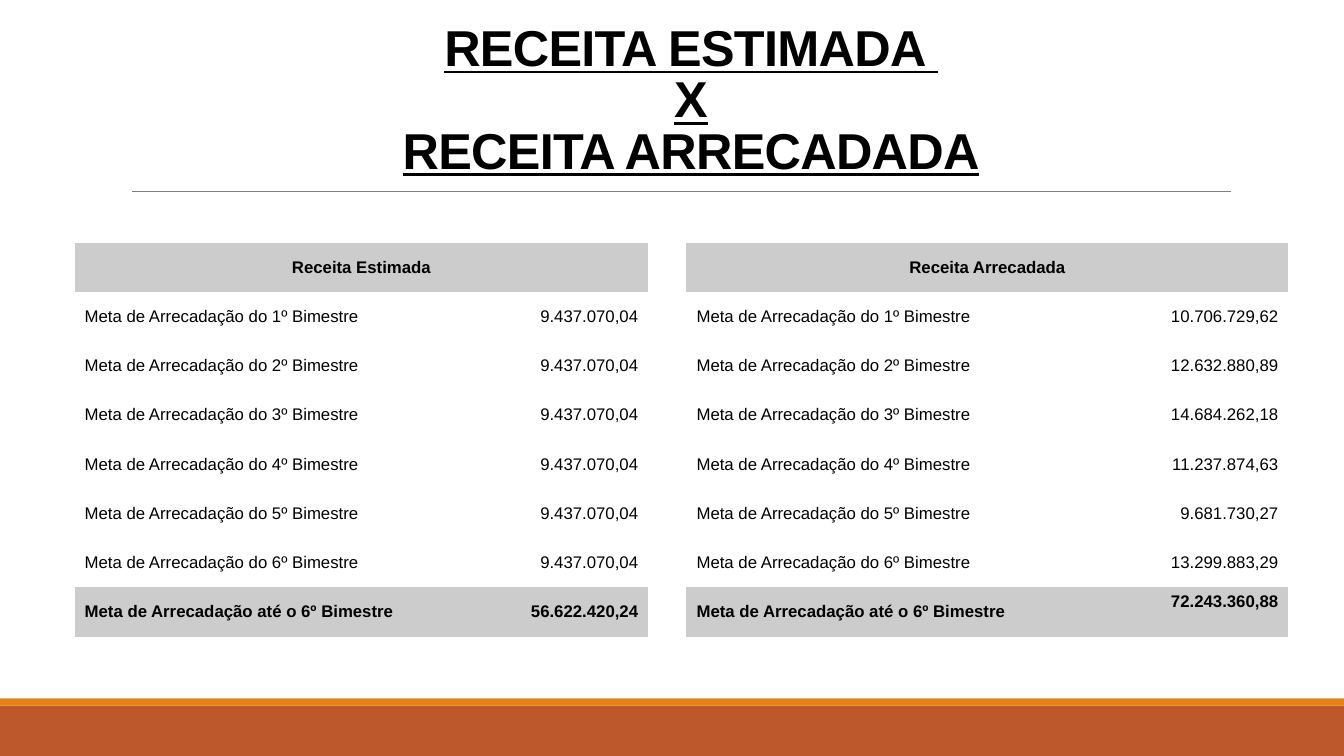
from lxml.etree import SubElement
from pptx import Presentation
from pptx.dml.color import RGBColor
from pptx.enum.shapes import MSO_CONNECTOR, MSO_SHAPE
from pptx.enum.text import MSO_ANCHOR, PP_ALIGN
from pptx.oxml.ns import qn
from pptx.util import Cm, Pt

TITLE = "RECEITA ESTIMADA \vX\vRECEITA ARRECADADA"
PERIODS = [f"do {n}º Bimestre" for n in range(1, 7)] + ["até o 6º Bimestre"]
TABLES = [
    {"header": "Receita Estimada", "left": 1.88, "widths": (8.31, 6.15),
     "values": ["9.437.070,04"] * 6 + ["56.622.420,24"],
     "total_anchor": MSO_ANCHOR.MIDDLE},
    {"header": "Receita Arrecadada", "left": 17.3, "widths": (10.59, 4.58),
     "values": ["10.706.729,62", "12.632.880,89", "14.684.262,18", "11.237.874,63",
                "9.681.730,27", "13.299.883,29", "72.243.360,88"],
     "total_anchor": MSO_ANCHOR.TOP},
]
BARS = [(17.78, 1.27, "BD582C"), (17.6, 0.18, "E48312")]
WIDTH, HEIGHT = 33.87, 19.05
TABLE_TOP, ROW_HEIGHT = 6.12, 1.24
PLAIN_STYLE = "{2D5ABB26-0587-4C30-8999-92F81FD0307C}"


def paint(fmt, color):
    """Give a fill a solid hex colour."""
    fmt.solid()
    fmt.fore_color.rgb = RGBColor.from_string(color)


def style(p, size, align, bold):
    """Set the alignment of a paragraph and the font of its runs."""
    p.alignment = align
    for r in p.runs:
        r.font.name, r.font.size, r.font.bold = "Arial", Pt(size), bold
        paint(r.font.fill, "000000")


def fill_cell(cell, text, align, strong, anchor=MSO_ANCHOR.MIDDLE):
    """Write one table cell, grey and bold when strong."""
    cell.text = text
    cell.vertical_anchor = anchor
    paint(cell.fill, "CCCCCC" if strong else "FFFFFF")
    style(cell.text_frame.paragraphs[0], 12, align, strong)


def add_revenue_table(s, header, left, widths, values, total_anchor):
    """Add a table with a header, the periods and a total row."""
    count = len(values) + 1
    frame = s.shapes.add_table(count, 2, Cm(left), Cm(TABLE_TOP),
                               Cm(sum(widths)), Cm(ROW_HEIGHT * count))
    table = frame.table
    table._tbl.tblPr.find(qn("a:tableStyleId")).text = PLAIN_STYLE
    for column, width in zip(table.columns, widths):
        column.width = Cm(width)
    for row in table.rows:
        row.height = Cm(ROW_HEIGHT)
    table.cell(0, 0).merge(table.cell(0, 1))
    fill_cell(table.cell(0, 0), header, PP_ALIGN.CENTER, True)
    for i, (period, value) in enumerate(zip(PERIODS, values), 1):
        total = i == len(values)
        anchor = total_anchor if total else MSO_ANCHOR.MIDDLE
        fill_cell(table.cell(i, 0), f"Meta de Arrecadação {period}", PP_ALIGN.LEFT, total)
        fill_cell(table.cell(i, 1), value, PP_ALIGN.RIGHT, total, anchor)


def add_title(s):
    """Add the underlined three-line title."""
    tf = s.shapes.add_textbox(Cm(2.39), Cm(0.79), Cm(30.05), Cm(3.86)).text_frame
    tf.word_wrap = True
    tf.vertical_anchor = MSO_ANCHOR.BOTTOM
    tf.text = TITLE
    p = tf.paragraphs[0]
    p.line_spacing = 0.85
    style(p, 36, PP_ALIGN.CENTER, True)
    for r in p.runs:
        r.font.underline = True
        r.font._element.set("spc", "-50")


def main():
    """Build and save the slide."""
    prs = Presentation()
    prs.slide_width, prs.slide_height = Cm(WIDTH), Cm(HEIGHT)
    s = prs.slides.add_slide(prs.slide_layouts[6])
    for top, height, color in BARS:
        bar = s.shapes.add_shape(MSO_SHAPE.RECTANGLE, 0, Cm(top), Cm(WIDTH), Cm(height))
        bar.shadow.inherit = False
        paint(bar.fill, color)
        bar.line.fill.background()
    rule = s.shapes.add_connector(MSO_CONNECTOR.STRAIGHT, Cm(3.33), Cm(4.83), Cm(31.01), Cm(4.83))
    paint(rule.line.fill, "808080")
    rule.line.width = Pt(0.5)
    SubElement(rule._element.spPr, qn("a:effectLst"))
    add_title(s)
    for table in TABLES:
        add_revenue_table(s, **table)
    prs.save("out.pptx")


if __name__ == "__main__":
    main()
